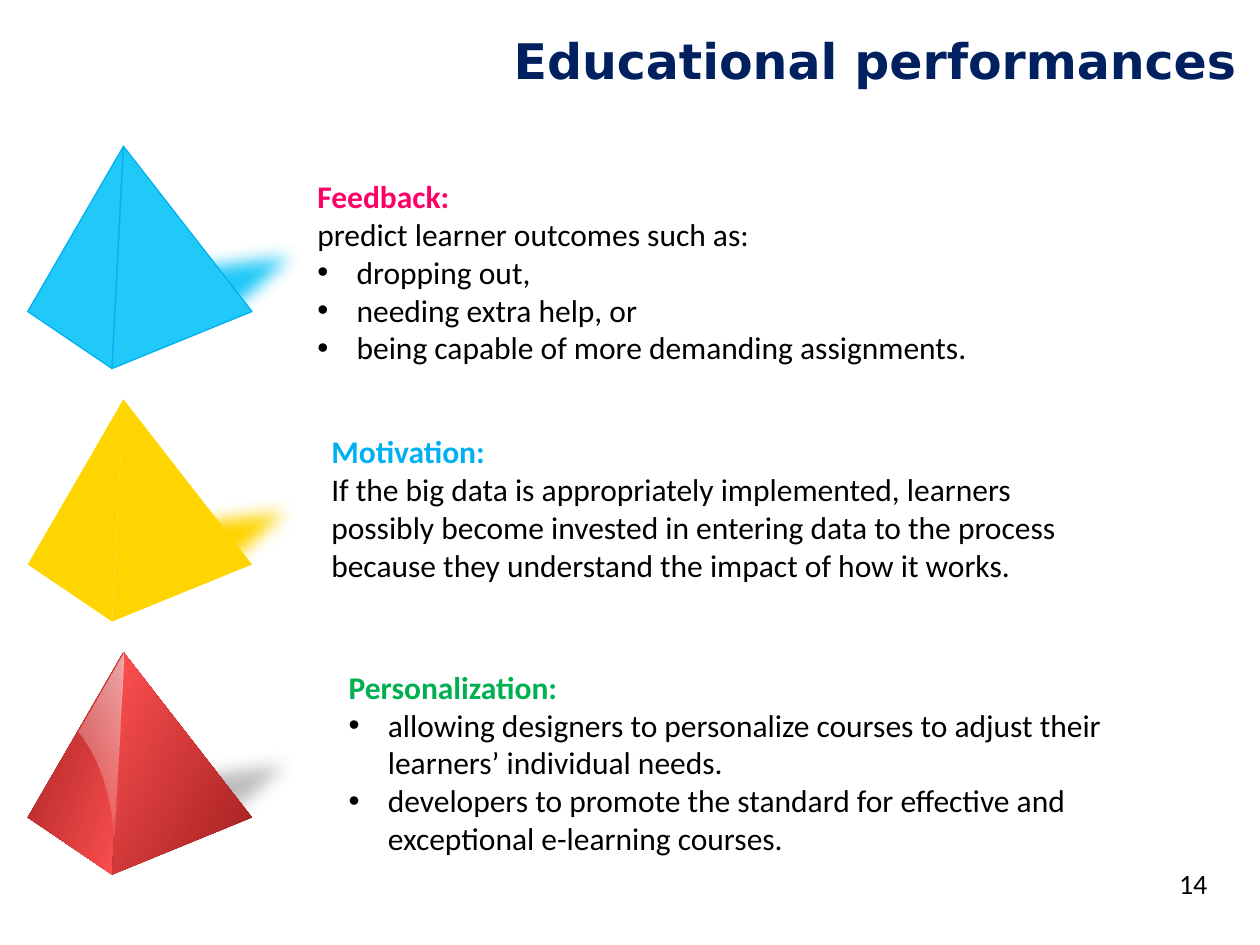
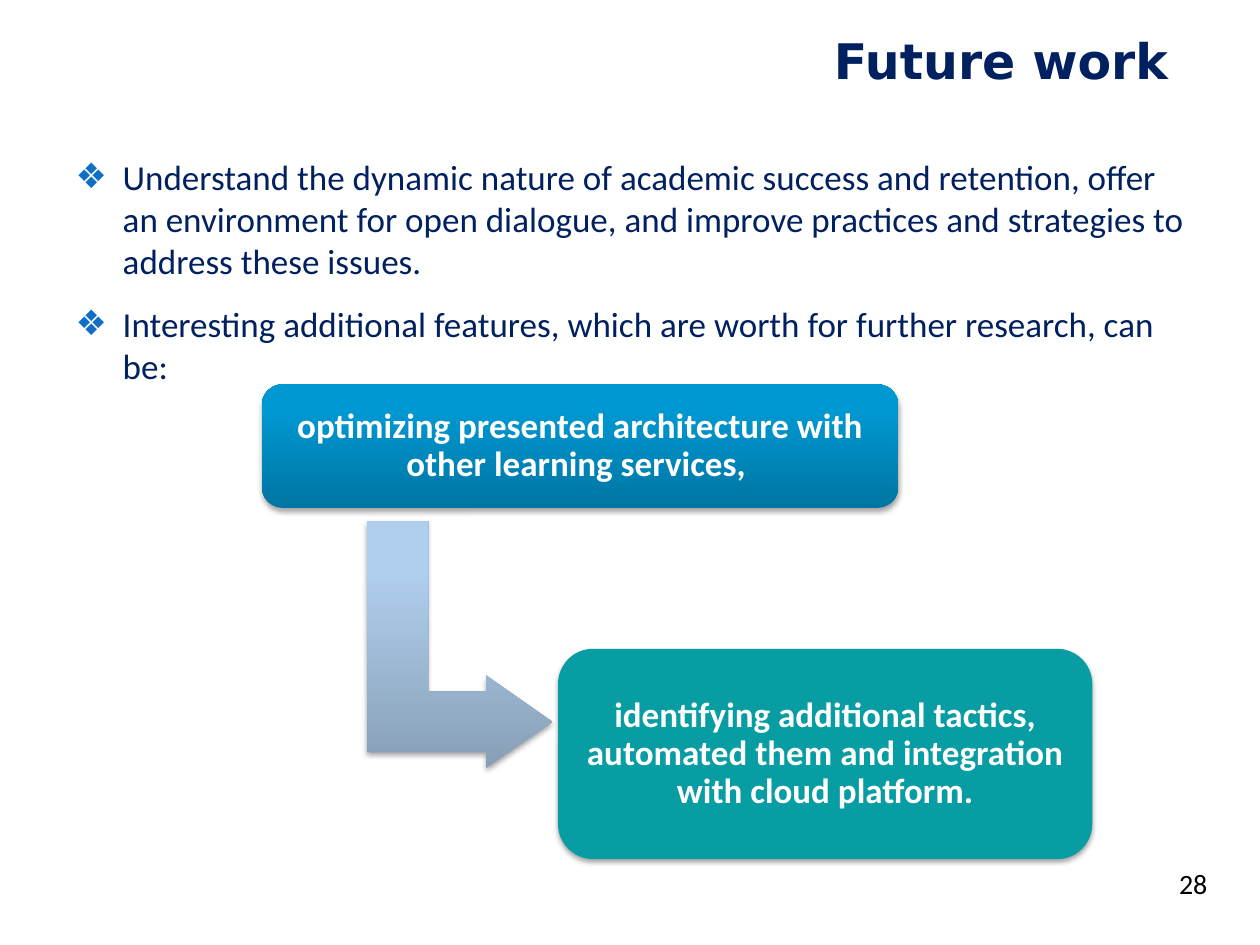
import pptx
import pptx.util
import pptx.dml.color
import pptx.enum.shapes
import pptx.enum.text
from lxml import etree
from pptx.oxml.ns import qn

Cm, Pt = pptx.util.Cm, pptx.util.Pt
SHAPE = pptx.enum.shapes.MSO_SHAPE
ALIGN = pptx.enum.text.PP_ALIGN
ANCHOR = pptx.enum.text.MSO_ANCHOR
FIT = pptx.enum.text.MSO_AUTO_SIZE

COLORS = {
    "navy": "002060", "black": "000000", "white": "FFFFFF", "bullet": "0F6FC6",
    "pink": "FF0066", "sky": "00B0F0", "green": "00B050",
    "blue": "20C9F8", "yellow": "FFD501", "grey": "BFBFBF",
    "dark red": "A11F1F", "red": "FF5151", "teal": "089CA3",
    "deep blue": "0075A2", "mid blue": "0098D2", "light blue": "0099D3",
    "steel": "879FB6", "pale blue": "B0CFED", "pale sky": "AFD0EF",
}
BODY_FONT, TITLE_FONT = "Calibri", "DejaVu Sans"

APEX, FRONT, LEFT, RIGHT = (1.93, 0), (1.7, 4.48), (0, 3.33), (4.52, 3.33)
CAST = [(6.5, 1.73), (4.62, 3.45), (2.46, 3.86), (1.32, 2.34)]
GLOSS_CURVE = [(1.73, 3.71), (1.68, 2.82), (1.4, 2.06), (1.02, 1.6)]


def rgb(name):
    return pptx.dml.color.RGBColor.from_string(COLORS[name])


def node(parent, tag, **attrs):
    return etree.SubElement(parent, qn("a:" + tag), {k: str(v) for k, v in attrs.items()})


def set_bullet(p, char, indent, color=None):
    pPr = p._p.get_or_add_pPr()
    pPr.set("marL", str(Cm(indent)))
    pPr.set("indent", str(-Cm(indent)))
    if color:
        node(node(pPr, "buClr"), "srgbClr", val=COLORS[color])
    node(pPr, "buFont", typeface="Arial")
    node(pPr, "buChar", char=char)


def write(tf, text, size=18, color="black", bold=False, font=BODY_FONT,
          align=None, bullet=None, before=None, spacing=None):
    p = tf.paragraphs[0]
    if p.runs:
        p = tf.add_paragraph()
    if bullet:
        set_bullet(p, *bullet)
    if align is not None:
        p.alignment = align
    if before is not None:
        p.space_before = Pt(before)
    if spacing:
        p.line_spacing = spacing
    r = p.add_run()
    r.text = text
    r.font.name, r.font.size, r.font.bold = font, Pt(size), bold
    r.font.color.rgb = rgb(color)


def place(sp, x, y, w, h):
    sp.left, sp.top, sp.width, sp.height = Cm(x), Cm(y), Cm(w), Cm(h)


def set_gradient(sp, stops, angle):
    sp.fill.gradient()
    grad = sp._element.spPr.find(qn("a:gradFill"))
    grad.set("rotWithShape", "0")
    for child in list(grad):
        grad.remove(child)
    gs_list = node(grad, "gsLst")
    for position, color, opacity in stops:
        clr = node(node(gs_list, "gs", pos=position * 1000), "srgbClr", val=COLORS[color])
        if opacity < 100:
            node(clr, "alpha", val=opacity * 1000)
    node(grad, "lin", ang=angle * 60000, scaled=0)


def paint(sp, fill, line=None, width=0.75):
    if isinstance(fill, str):
        sp.fill.solid()
        sp.fill.fore_color.rgb = rgb(fill)
    else:
        set_gradient(sp, *fill)
    if line:
        sp.line.color.rgb = rgb(line)
        sp.line.width = Pt(width)
    else:
        sp.line.fill.background()
    sp.shadow.inherit = False


def add_effect(sp, tag, **attrs):
    return node(sp._element.spPr.find(qn("a:effectLst")), tag, **attrs)


def drop_shadow(sp):
    shadow = add_effect(sp, "outerShdw", blurRad=Pt(3.1), dist=Pt(1.8),
                        dir=5400000, rotWithShape=0)
    node(node(shadow, "srgbClr", val=COLORS["black"]), "alpha", val=35000)


def bezier(a, b, c, d, steps=12):
    for i in range(steps + 1):
        t = i / steps
        u = 1 - t
        yield tuple(u**3 * a[k] + 3 * u * u * t * b[k] + 3 * u * t * t * c[k] + t**3 * d[k]
                    for k in (0, 1))


def polygon(shapes, x, y, points):
    pts = [(Cm(x + px), Cm(y + py)) for px, py in points]
    builder = shapes.build_freeform(*pts[0])
    builder.add_line_segments(pts[1:], close=True)
    return builder.convert_to_shape()


def pyramid(s, x, y, cast, left, right, gloss=None, line=None):
    shapes = s.shapes.add_group_shape().shapes
    sp = polygon(shapes, x, y, CAST)
    paint(sp, cast, line, 2)
    add_effect(sp, "softEdge", rad=Pt(10))
    paint(polygon(shapes, x, y, [APEX, FRONT, LEFT]), left, line)
    paint(polygon(shapes, x, y, [APEX, RIGHT, FRONT]), right, line)
    if gloss:
        paint(polygon(shapes, x, y, [APEX, (1.73, 3.78), *bezier(*GLOSS_CURVE)]), gloss)


def topic(s, x, y, w, heading, color, items):
    tf = s.shapes.add_textbox(Cm(x), Cm(y), Cm(w), Cm(4.11)).text_frame
    tf.word_wrap = True
    tf.auto_size = FIT.SHAPE_TO_FIT_TEXT
    write(tf, heading, color=color, bold=True)
    for text, bulleted in items:
        write(tf, text, bullet=("•", 0.79) if bulleted else None)


def card(s, x, y, w, h, text, fill):
    sp = s.shapes.add_shape(SHAPE.ROUNDED_RECTANGLE, Cm(x), Cm(y), Cm(w), Cm(h))
    paint(sp, fill)
    drop_shadow(sp)
    tf = sp.text_frame
    tf.word_wrap = True
    tf.vertical_anchor = ANCHOR.MIDDLE
    tf.margin_left = tf.margin_right = tf.margin_top = tf.margin_bottom = Cm(0.2)
    write(tf, text, size=20, color="white", bold=True, align=ALIGN.CENTER, spacing=0.9)


def step_flow(s, x, y):
    arrow = s.shapes.add_shape(SHAPE.BENT_UP_ARROW, Cm(x + 1.5), Cm(y + 3.38), Cm(4.98), Cm(3.73))
    for i, value in enumerate((0.328, 0.25, 0.358)):
        arrow.adjustments[i] = value
    arrow.rotation = 90
    paint(arrow, ([(0, "steel", 100), (80, "pale blue", 100), (100, "pale sky", 100)], 270))
    drop_shadow(arrow)
    card(s, x, y, 12.83, 2.49,
         "optimizing presented architecture with other learning services, ",
         ([(0, "deep blue", 100), (80, "mid blue", 100), (100, "light blue", 100)], 270))
    card(s, x + 5.97, y + 5.33, 10.77, 4.24,
         "identifying additional tactics, automated them and integration with cloud platform.",
         "teal")


def new_slide(prs, layout, title, x, w, number):
    s = prs.slides.add_slide(prs.slide_layouts[layout])
    place(s.shapes.title, x, 0.43, w, 1.57)
    tf = s.shapes.title.text_frame
    tf.auto_size = FIT.NONE
    tf.vertical_anchor = ANCHOR.MIDDLE
    write(tf, title, size=28, color="navy", bold=True, font=TITLE_FONT, align=ALIGN.RIGHT)
    tf = s.shapes.add_textbox(Cm(23.5), Cm(17.35), Cm(1.09), Cm(0.94)).text_frame
    tf.word_wrap = False
    tf.auto_size = FIT.SHAPE_TO_FIT_TEXT
    write(tf, str(number), size=16, align=ALIGN.RIGHT)
    return s


def performances_slide(prs):
    s = new_slide(prs, 5, "Educational performances", 2.31, 22.86, 14)
    red = [(0, "dark red", 100), (100, "red", 100)]
    shine = ([(0, "white", 2), (100, "white", 57)], 320)
    looks = [
        dict(cast="blue", left="blue", right="blue", line="sky"),
        dict(cast="yellow", left="yellow", right="yellow", gloss="yellow"),
        dict(cast="grey", left=(red, 20), right=(red, 210), gloss=shine),
    ]
    for i, look in enumerate(looks):
        pyramid(s, 0.56, 2.95 + 5.1 * i, **look)
    topic(s, 6.15, 3.45, 15.42, "Feedback:", "pink", [
        ("predict learner outcomes such as:", False),
        ("dropping out,", True),
        ("needing extra help, or", True),
        ("being capable of more demanding assignments.", True)])
    topic(s, 6.43, 8.59, 16.43, "Motivation:", "sky", [
        ("If the big data is appropriately implemented, learners possibly become invested in "
         "entering data to the process because they understand the impact of how it works.", False)])
    topic(s, 6.78, 13.34, 16.94, "Personalization:", "green", [
        ("allowing designers to personalize courses to adjust their learners’ individual needs.", True),
        ("developers to promote the standard for effective and exceptional e-learning courses.", True)])


def future_slide(prs):
    s = new_slide(prs, 1, "Future work ", 3.18, 20.96, 28)
    body = s.placeholders[1]
    place(body, 1.27, 3, 22.86, 14.58)
    body.text_frame.auto_size = FIT.NONE
    items = [
        "Understand the dynamic nature of academic success and retention, offer an environment "
        "for open dialogue, and improve practices and strategies to address these issues.",
        "Interesting additional features, which are worth for further research, can be:",
    ]
    for i, text in enumerate(items):
        write(body.text_frame, text, size=20, color="navy",
              bullet=("❖", 0.95, "bullet"), before=12 if i else 0)
    step_flow(s, 5.28, 7.75)


def main():
    prs = pptx.Presentation()
    prs.slide_width, prs.slide_height = Cm(25.4), Cm(19.05)
    performances_slide(prs)
    future_slide(prs)
    prs.save("out.pptx")


if __name__ == "__main__":
    main()
